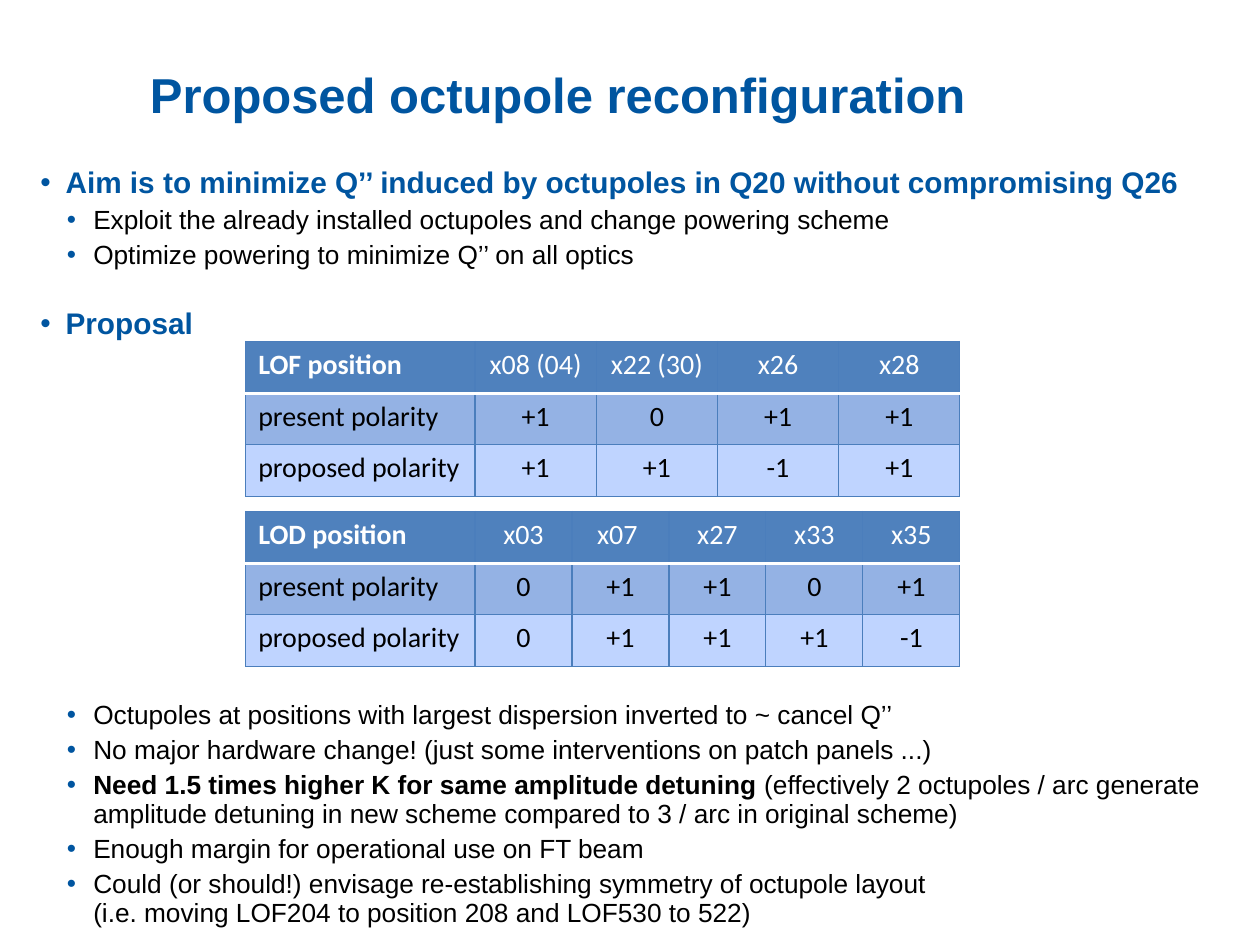
import pptx
import pptx.dml.color
import pptx.enum.text
import pptx.oxml
import pptx.oxml.ns
import pptx.util
from pptx.util import Inches, Pt

RGBColor = pptx.dml.color.RGBColor
NAVY = RGBColor(0x00, 0x55, 0xA0)
BLACK = RGBColor(0x00, 0x00, 0x00)
WHITE = RGBColor(0xFF, 0xFF, 0xFF)
HEADER_BLUE = RGBColor(0x4F, 0x81, 0xBD)
MIDDLE_BLUE = RGBColor(0x94, 0xB2, 0xE4)
PALE_BLUE = RGBColor(0xBF, 0xD4, 0xFF)
GRID_BLUE = RGBColor(0x4B, 0x7E, 0xBC)
ROW_FILLS = [HEADER_BLUE, MIDDLE_BLUE, PALE_BLUE]

TABLE_LEFT, TABLE_WIDTH, LABEL_WIDTH, ROW_HEIGHT = 1.95, 5.67, 1.82, 0.41
TABLE_GAP = 202

LOF_ROWS = [
    ["LOF position", "x08 (04)", "x22 (30)", "x26", "x28"],
    ["present polarity", "+1", "0", "+1", "+1"],
    ["proposed polarity", "+1", "+1", "-1", "+1"],
]
LOD_ROWS = [
    ["LOD position", "x03", "x07 ", "x27", "x33", "x35"],
    ["present polarity", "0", "+1", "+1", "0", "+1"],
    ["proposed polarity", "0", "+1", "+1", "+1", "-1"],
]


def place(box, left, top, width, height):
    box.left, box.top = Inches(left), Inches(top)
    box.width, box.height = Inches(width), Inches(height)
    frame = box.text_frame
    frame.word_wrap = True
    frame.auto_size = pptx.enum.text.MSO_AUTO_SIZE.NONE
    frame.vertical_anchor = pptx.enum.text.MSO_ANCHOR.TOP
    return frame


def style_font(font, name, size, color, bold=None):
    font.name, font.size, font.bold = name, Pt(size), bold
    font.color.rgb = color


def add_title(page, text):
    frame = place(page.shapes.title, 1.09, 0.41, 8.71, 0.82)
    frame.margin_top = Inches(0.1)
    para = frame.paragraphs[0]
    para.text = text
    para.alignment = pptx.enum.text.PP_ALIGN.LEFT
    style_font(para.font, "Arial", 28, NAVY, True)


def set_bullet(para, left, hanging):
    properties = para._p.get_or_add_pPr()
    properties.set("marL", str(Inches(left)))
    properties.set("indent", str(-Inches(hanging)))
    namespace = pptx.oxml.ns.nsdecls("a")
    for xml in (
        f'<a:buClr {namespace}><a:srgbClr val="{NAVY}"/></a:buClr>',
        f'<a:buFont {namespace} typeface="Arial"/>',
        f'<a:buChar {namespace} char="•"/>',
    ):
        properties.append(pptx.oxml.parse_xml(xml))


def next_para(frame):
    first = frame.paragraphs[0]
    return frame.add_paragraph() if first.runs else first


def add_heading(frame, text, before=0):
    para = next_para(frame)
    para.text = text
    para.space_before, para.space_after = Pt(before), Pt(4)
    set_bullet(para, 0.2, 0.2)
    style_font(para.font, "Arial", 17, NAVY, True)


def add_point(frame, text, lead="", before=0):
    para = next_para(frame)
    para.level = 1
    para.line_spacing = 0.9
    para.space_before, para.space_after = Pt(before), Pt(4)
    set_bullet(para, 0.42, 0.21)
    style_font(para.font, "Arial", 15, BLACK)
    if lead:
        span = para.add_run()
        span.text = lead
        span.font.bold = True
    for number, line in enumerate(text.split("\n")):
        if number:
            para.add_line_break()
        para.add_run().text = line


def add_body(page):
    frame = place(page.placeholders[1], 0.22, 1.25, 9.58, 6.25)
    add_heading(frame, "Aim is to minimize Q’’ induced by octupoles in Q20 without compromising Q26")
    add_point(frame, "Exploit the already installed octupoles and change powering scheme")
    add_point(frame, "Optimize powering to minimize Q’’ on all optics")
    add_heading(frame, "Proposal", before=16)
    add_point(frame, "Octupoles at positions with largest dispersion inverted to ~ cancel Q’’",
              before=TABLE_GAP)
    add_point(frame, "No major hardware change! (just some interventions on patch panels ...)")
    add_point(frame, "(effectively 2 octupoles / arc generate amplitude detuning in new scheme "
              "compared to 3 / arc in original scheme)",
              lead="Need 1.5 times higher K for same amplitude detuning ")
    add_point(frame, "Enough margin for operational use on FT beam")
    add_point(frame, "Could (or should!) envisage re-establishing symmetry of octupole layout \n"
              "(i.e. moving LOF204 to position 208 and LOF530 to 522)")


def set_border(cell, side, color, width):
    cell._tc.get_or_add_tcPr().append(pptx.oxml.parse_xml(
        f'<a:ln{side} {pptx.oxml.ns.nsdecls("a")} w="{Pt(width)}"><a:solidFill>'
        f'<a:srgbClr val="{color}"/></a:solidFill></a:ln{side}>'))


def fill_cell(cell, text, row, column):
    rules = {side: (GRID_BLUE, 0.75) for side in "LRTB"}
    if row < 2:
        rules["B" if row == 0 else "T"] = (WHITE, 2)
    for side, (color, width) in rules.items():
        set_border(cell, side, color, width)
    cell.fill.solid()
    cell.fill.fore_color.rgb = ROW_FILLS[row]
    para = cell.text_frame.paragraphs[0]
    para.text = text
    if column:
        para.alignment = pptx.enum.text.PP_ALIGN.CENTER
    style_font(para.font, "Calibri", 16, BLACK if row else WHITE, row == 0 and column == 0)


def add_polarity_table(page, top, rows):
    count = len(rows[0])
    table = page.shapes.add_table(
        len(rows), count, Inches(TABLE_LEFT), Inches(top),
        Inches(TABLE_WIDTH), Inches(ROW_HEIGHT * len(rows))).table
    table.horz_banding = False
    value_width = (TABLE_WIDTH - LABEL_WIDTH) / (count - 1)
    for column in range(count):
        table.columns[column].width = Inches(value_width if column else LABEL_WIDTH)
    for row, texts in enumerate(rows):
        table.rows[row].height = Inches(ROW_HEIGHT)
        for column, text in enumerate(texts):
            fill_cell(table.cell(row, column), text, row, column)


def main():
    deck = pptx.Presentation()
    deck.slide_width, deck.slide_height = Inches(10), Inches(7.5)
    page = deck.slides.add_slide(deck.slide_layouts[1])
    add_title(page, "Proposed octupole reconfiguration")
    add_body(page)
    add_polarity_table(page, 2.71, LOF_ROWS)
    add_polarity_table(page, 4.06, LOD_ROWS)
    deck.save("out.pptx")


if __name__ == "__main__":
    main()
